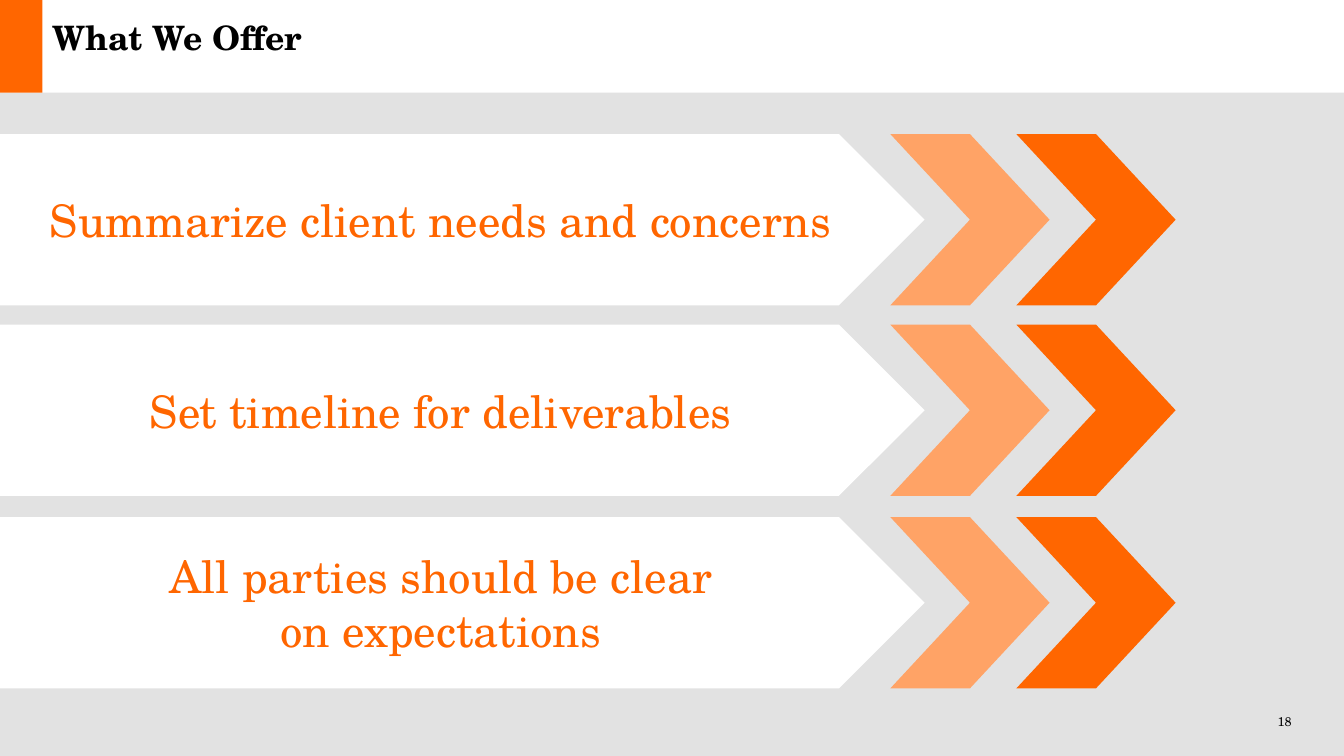
from pptx import Presentation
from pptx.dml.color import RGBColor
from pptx.enum.shapes import MSO_SHAPE
from pptx.enum.text import MSO_ANCHOR, PP_ALIGN
from pptx.util import Inches, Pt

FONT = "TeX Gyre Schola"
ORANGE, PEACH, GREY, WHITE, BLACK = "FF6600", "FFA366", "E2E2E2", "FFFFFF", "000000"

deck = Presentation()
deck.slide_width, deck.slide_height = Inches(13.33), Inches(7.5)
slide = deck.slides.add_slide(deck.slide_layouts[6])


def add_block(kind, color, left, top, width, height):
    shape = slide.shapes.add_shape(
        kind, Inches(left), Inches(top), Inches(width), Inches(height))
    shape.shadow.inherit = False
    shape.fill.solid()
    shape.fill.fore_color.rgb = RGBColor.from_string(color)
    shape.line.fill.background()
    return shape


def set_text(shape, lines, size, color, align, anchor, bold=False):
    frame = shape.text_frame
    frame.word_wrap = True
    frame.vertical_anchor = anchor
    frame.text = "\n".join(lines)
    for para in frame.paragraphs:
        para.alignment = align
        para.font.name = FONT
        para.font.size = Pt(size)
        para.font.bold = bold
        para.font.color.rgb = RGBColor.from_string(color)
    return frame


# Backdrop and header
add_block(MSO_SHAPE.RECTANGLE, GREY, 0, 0.92, 13.33, 6.58)
add_block(MSO_SHAPE.RECTANGLE, ORANGE, 0, 0, 0.42, 0.92)

title = slide.shapes.add_textbox(Inches(0.52), Inches(0.25), Inches(12.29), Inches(1.14))
head = set_text(title, ["What We Offer"], 24, BLACK, PP_ALIGN.LEFT, MSO_ANCHOR.TOP, True)
head.paragraphs[0].line_spacing = Pt(23)

number = slide.shapes.add_textbox(Inches(12.1), Inches(7.06), Inches(0.71), Inches(0.2))
foot = set_text(number, ["18"], 9, BLACK, PP_ALIGN.RIGHT, MSO_ANCHOR.MIDDLE)

for frame in (head, foot):
    frame.margin_left = frame.margin_right = frame.margin_top = frame.margin_bottom = 0

# Offers, each followed by two chevrons
offers = [
    (1.33, ["Summarize client needs and concerns"]),
    (3.22, ["Set timeline for deliverables"]),
    (5.13, ["All parties should be clear", "on expectations"]),
]
for top, lines in offers:
    banner = add_block(MSO_SHAPE.PENTAGON, WHITE, 0, top, 9.17, 1.7)
    set_text(banner, lines, 32, ORANGE, PP_ALIGN.CENTER, MSO_ANCHOR.MIDDLE)
    for left, color in ((8.83, PEACH), (10.08, ORANGE)):
        add_block(MSO_SHAPE.CHEVRON, color, left, top, 1.58, 1.7)

deck.save("out.pptx")
